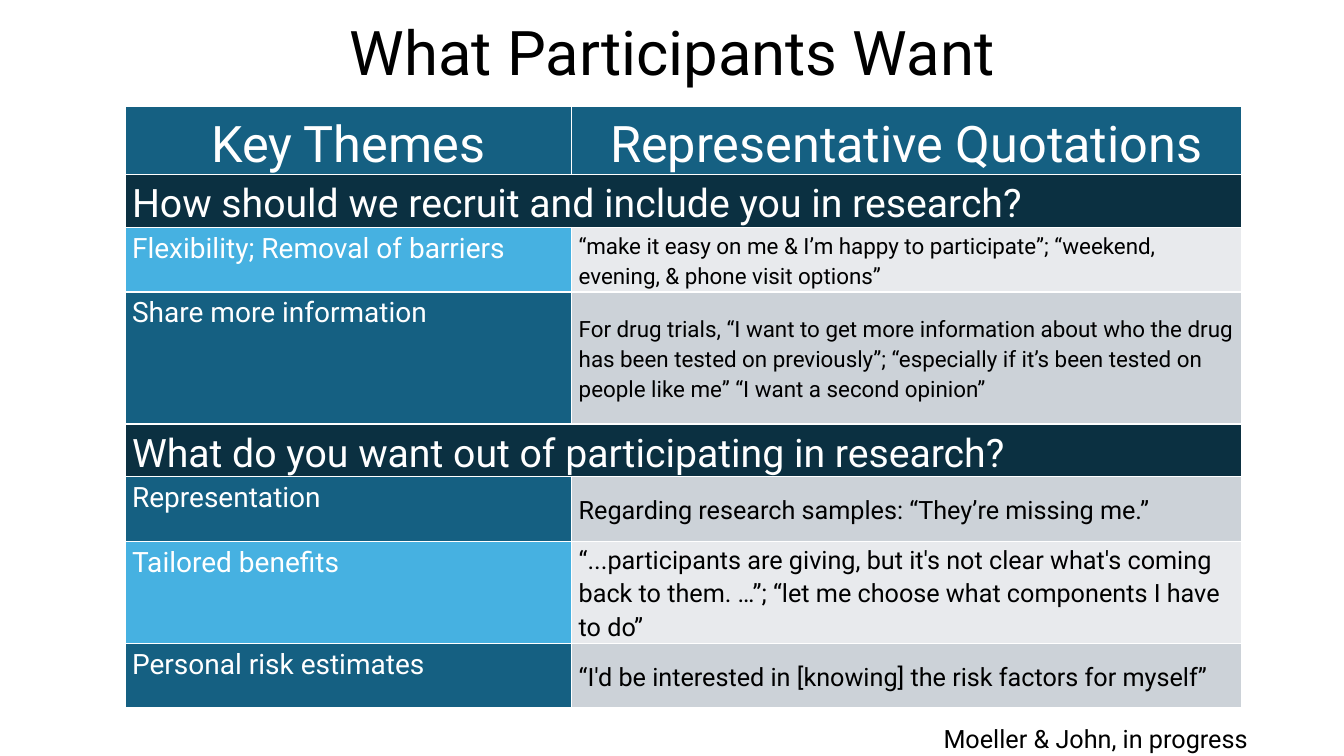
from dataclasses import dataclass

from lxml import etree
from pptx import Presentation
from pptx.dml.color import RGBColor
from pptx.enum.text import MSO_ANCHOR, MSO_AUTO_SIZE, PP_ALIGN
from pptx.oxml.ns import qn
from pptx.slide import Slide
from pptx.table import Table, _Cell
from pptx.text.text import TextFrame
from pptx.util import Emu, Pt

CENTER, LEFT = PP_ALIGN.CENTER, PP_ALIGN.LEFT
TOP, MIDDLE = MSO_ANCHOR.TOP, MSO_ANCHOR.MIDDLE
NO_AUTOFIT = MSO_AUTO_SIZE.NONE

EMU_PER_PX = 9144  # 100 px to the inch
FONT = "Roboto"
TITLE_ONLY_LAYOUT = 5

BLACK = RGBColor(0x00, 0x00, 0x00)
WHITE = RGBColor(0xFF, 0xFF, 0xFF)
TEAL = RGBColor(0x15, 0x60, 0x82)
NAVY = RGBColor(0x0B, 0x30, 0x41)
SKY = RGBColor(0x46, 0xB1, 0xE1)
LIGHT_GRAY = RGBColor(0xE8, 0xEA, 0xED)
GRAY = RGBColor(0xCC, 0xD2, 0xD8)


@dataclass(frozen=True)
class Section:
    question: str
    height: int = 52


@dataclass(frozen=True)
class Theme:
    name: str
    quotation: str
    quotation_size: int
    height: int = 64


HEADINGS = ("Key Themes", "Representative Quotations")
HEADING_HEIGHT = 66
COLUMN_WIDTHS = (443, 664)
ROWS = (
    Section("How should we recruit and include you in research?"),
    Theme(
        "Flexibility; Removal of barriers",
        "“make it easy on me & I’m happy to participate”; "
        "“weekend, evening, & phone visit options”",
        16,
    ),
    Theme(
        "Share more information",
        "For drug trials, “I want to get more information about who the drug "
        "has been tested on previously”; “especially if it’s been tested on "
        "people like me” “I want a second opinion”",
        16,
        131,
    ),
    Section("What do you want out of participating in research?"),
    Theme("Representation", "Regarding research samples: “They’re missing me.”", 18),
    Theme(
        "Tailored benefits",
        "“...participants are giving, but it's not clear what's coming back to "
        "them. …”; “let me choose what components I have to do”",
        18,
        101,
    ),
    Theme(
        "Personal risk estimates",
        "“I'd be interested in [knowing] the risk factors for myself”",
        18,
    ),
)


def px(length: int) -> Emu:
    return Emu(length * EMU_PER_PX)


def write(
    text_frame: TextFrame,
    text: str,
    size: int,
    color: RGBColor,
    alignment: PP_ALIGN = LEFT,
    line_spacing: float = 1.0,
) -> None:
    text_frame.text = text
    paragraph = text_frame.paragraphs[0]
    paragraph.alignment = alignment
    paragraph.line_spacing = line_spacing
    font = paragraph.runs[0].font
    font.name, font.size, font.bold = FONT, Pt(size), False
    font.color.rgb = color


def paint_cell(cell: _Cell, fill: RGBColor) -> None:
    """Give a cell white borders and a solid fill."""
    properties = cell._tc.get_or_add_tcPr()
    for side in ("a:lnL", "a:lnR", "a:lnT", "a:lnB"):
        line = etree.SubElement(properties, qn(side), w=str(Pt(1)))
        solid = etree.SubElement(line, qn("a:solidFill"))
        etree.SubElement(solid, qn("a:srgbClr"), val=str(WHITE))
    cell.fill.solid()
    cell.fill.fore_color.rgb = fill


def fill_cell(
    cell: _Cell,
    text: str,
    size: int,
    fill: RGBColor,
    color: RGBColor = WHITE,
    alignment: PP_ALIGN = LEFT,
    anchor: MSO_ANCHOR = TOP,
) -> None:
    paint_cell(cell, fill)
    cell.margin_left = cell.margin_right = px(7)
    cell.margin_top = cell.margin_bottom = 0
    cell.vertical_anchor = anchor
    write(cell.text_frame, text, size, color, alignment, 1.15)


def add_section(table: Table, row: int, section: Section) -> None:
    first, last = table.cell(row, 0), table.cell(row, 1)
    first.merge(last)
    fill_cell(first, section.question, 28, NAVY)
    paint_cell(last, NAVY)


def add_theme(table: Table, row: int, theme: Theme) -> None:
    # Even rows take the light band, odd rows the dark one
    name_fill, quotation_fill = (TEAL, GRAY) if row % 2 else (SKY, LIGHT_GRAY)
    fill_cell(table.cell(row, 0), theme.name, 20, name_fill)
    fill_cell(
        table.cell(row, 1), theme.quotation, theme.quotation_size,
        quotation_fill, BLACK, anchor=MIDDLE,
    )


def add_themes_table(slide: Slide) -> None:
    heights = [HEADING_HEIGHT] + [row.height for row in ROWS]
    table = slide.shapes.add_table(
        len(heights), len(COLUMN_WIDTHS),
        px(124), px(106), px(sum(COLUMN_WIDTHS)), px(sum(heights)),
    ).table
    table.horz_banding = False
    for column, width in zip(table.columns, COLUMN_WIDTHS):
        column.width = px(width)
    for table_row, height in zip(table.rows, heights):
        table_row.height = px(height)

    for column_index, heading in enumerate(HEADINGS):
        fill_cell(table.cell(0, column_index), heading, 36, TEAL, alignment=CENTER)
    for row_index, row in enumerate(ROWS, start=1):
        if isinstance(row, Section):
            add_section(table, row_index, row)
        else:
            add_theme(table, row_index, row)


def main() -> None:
    presentation = Presentation()
    presentation.slide_width, presentation.slide_height = px(1333), px(750)
    slide = presentation.slides.add_slide(
        presentation.slide_layouts[TITLE_ONLY_LAYOUT]
    )

    # Title
    title = slide.shapes.title
    title.left, title.top, title.width, title.height = px(92), px(3), px(1150), px(105)
    title.text_frame.auto_size = NO_AUTOFIT
    title.text_frame.vertical_anchor = MIDDLE
    write(title.text_frame, "What Participants Want", 44, BLACK, CENTER, 0.9)

    # Themes and quotations
    add_themes_table(slide)

    # Source note
    note = slide.shapes.add_textbox(px(926), px(713), px(407), px(40))
    note.text_frame.word_wrap = True
    write(note.text_frame, "Moeller & John, in progress", 18, BLACK)

    presentation.save("out.pptx")


if __name__ == "__main__":
    main()
